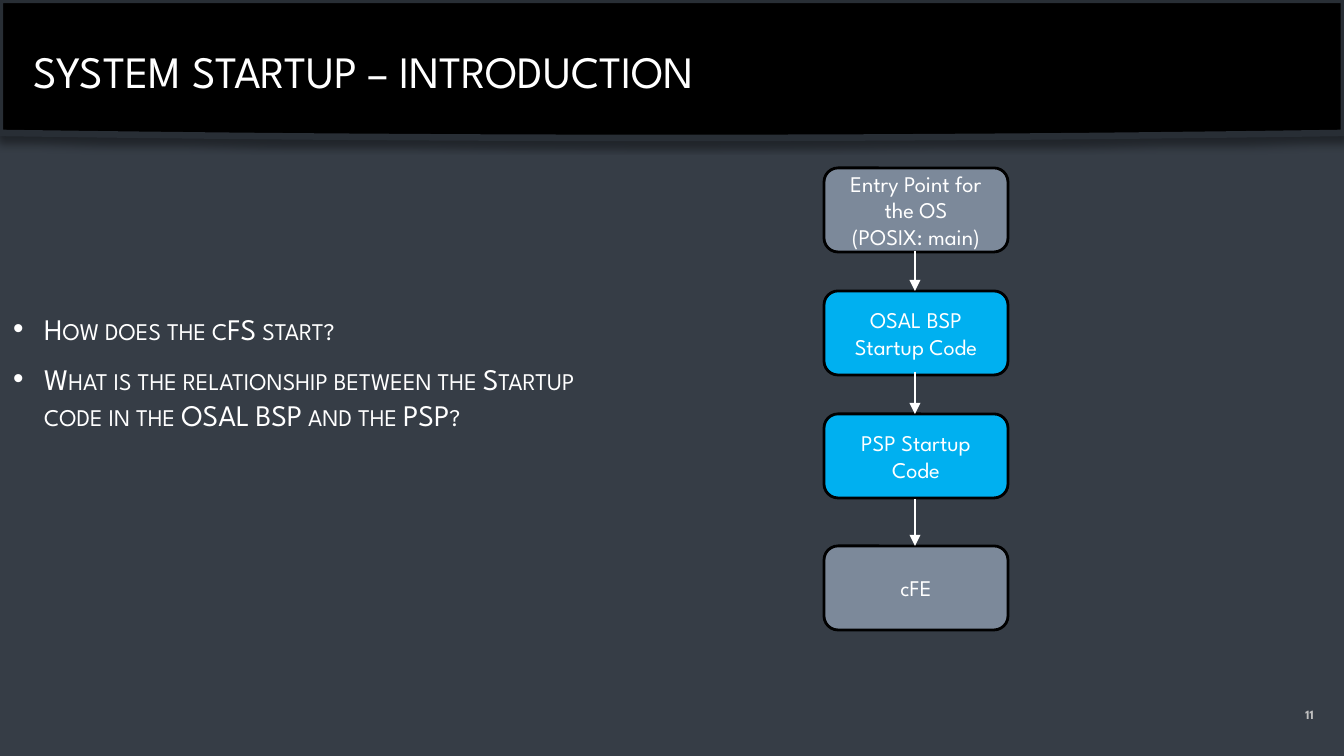
from lxml.etree import SubElement
from pptx import Presentation
from pptx.dml.color import RGBColor
from pptx.enum.shapes import MSO_CONNECTOR, MSO_SHAPE
from pptx.enum.text import MSO_ANCHOR, PP_ALIGN
from pptx.oxml.ns import qn
from pptx.util import Pt

PX = 914400 / 134.4  # EMU per px
WIDTH, HEIGHT = 1344, 756
FONT = "League Spartan"
WHITE = RGBColor(0xFF, 0xFF, 0xFF)
BLACK = RGBColor(0x00, 0x00, 0x00)
SLATE = RGBColor(0x36, 0x3D, 0x46)
EDGE = RGBColor(0x28, 0x2E, 0x35)
GRAY = RGBColor(0x7C, 0x89, 0x9A)
BLUE = RGBColor(0x00, 0xB0, 0xF0)
PALE = RGBColor(0xBF, 0xBF, 0xBF)


def px(*lengths):
    return [round(length * PX) for length in lengths]


def add_run(paragraph, text, size, color=WHITE):
    run = paragraph.add_run()
    run.text = text
    run.font.name = FONT
    run.font.size = Pt(size)
    run.font.color.rgb = color
    return run


prs = Presentation()
prs.slide_width, prs.slide_height = px(WIDTH, HEIGHT)
slide = prs.slides.add_slide(prs.slide_layouts[6])
slide.background.fill.solid()
slide.background.fill.fore_color.rgb = SLATE

# Banner with a bowed lower edge and a soft shadow
SIDE, BOW, STEPS = 133, 5, 32
curve = []
for step in range(STEPS + 1):
    t = 1 - step / STEPS
    curve.append(px(WIDTH * t, SIDE + BOW * 4 * t * (1 - t)))
builder = slide.shapes.build_freeform(*px(WIDTH, 0))
builder.add_line_segments(curve + [px(0, 0)], close=True)
banner = builder.convert_to_shape()
banner.fill.solid()
banner.fill.fore_color.rgb = BLACK
banner.line.color.rgb = EDGE
banner.line.width = Pt(3.5)
banner.shadow.inherit = False
effects = banner._element.spPr.find(qn("a:effectLst"))
shadow = SubElement(effects, qn("a:outerShdw"), blurRad=str(Pt(4)),
                    dist=str(Pt(3)), dir="5400000", rotWithShape="0")
shade = SubElement(shadow, qn("a:srgbClr"), val=str(BLACK))
SubElement(shade, qn("a:alpha"), val="40000")

# Title
title = slide.shapes.add_textbox(*px(20, 28, 1294, 85)).text_frame
title.word_wrap = True
title.vertical_anchor = MSO_ANCHOR.MIDDLE
add_run(title.paragraphs[0], "SYSTEM STARTUP – INTRODUCTION", 24)

# Questions
QUESTIONS = [
    "How does the cFS start?",
    "What is the relationship between the Startup code in the OSAL BSP and the PSP?",
]
questions = slide.shapes.add_textbox(*px(0, 169, 626, 503)).text_frame
questions.word_wrap = True
questions.vertical_anchor = MSO_ANCHOR.MIDDLE
questions.margin_bottom = px(105)[0]
indent = px(31)[0]
for i, question in enumerate(QUESTIONS):
    paragraph = questions.add_paragraph() if i else questions.paragraphs[0]
    paragraph.space_before = Pt(3.2)
    paragraph.space_after = Pt(4.5)
    props = paragraph._p.get_or_add_pPr()
    props.set("marL", str(indent))
    props.set("indent", str(-indent))
    bullet_color = SubElement(props, qn("a:buClr"))
    SubElement(bullet_color, qn("a:srgbClr"), val=str(WHITE))
    SubElement(props, qn("a:buFont"), typeface="Arial")
    SubElement(props, qn("a:buChar"), char="•")
    run = add_run(paragraph, question, 16)
    run.font._element.set("cap", "small")

# Startup sequence
STAGES = [
    (168, GRAY, ["Entry Point for the OS", "(POSIX: main)"]),
    (291, BLUE, ["OSAL BSP Startup Code"]),
    (414, BLUE, ["PSP Startup Code"]),
    (546, GRAY, ["cFE"]),
]
for top, color, lines in STAGES:
    stage = slide.shapes.add_shape(MSO_SHAPE.ROUNDED_RECTANGLE, *px(824, top, 184, 84))
    stage.shadow.inherit = False
    stage.fill.solid()
    stage.fill.fore_color.rgb = color
    stage.line.color.rgb = BLACK
    stage.line.width = Pt(1.5)
    label = stage.text_frame
    label.word_wrap = True
    label.vertical_anchor = MSO_ANCHOR.MIDDLE
    for i, line in enumerate(lines):
        paragraph = label.add_paragraph() if i else label.paragraphs[0]
        paragraph.alignment = PP_ALIGN.CENTER
        add_run(paragraph, line, 12)

# Arrows between the stages
for start, end in [(251, 291), (372, 414), (499, 546)]:
    arrow = slide.shapes.add_connector(MSO_CONNECTOR.STRAIGHT, *px(915, start, 915, end))
    arrow.line.color.rgb = WHITE
    arrow.line.width = Pt(1.5)
    SubElement(arrow.line._get_or_add_ln(), qn("a:tailEnd"), type="triangle")
    SubElement(arrow._element.spPr, qn("a:effectLst"))

# Page number
page = slide.shapes.add_textbox(*px(1246, 685, 81, 58)).text_frame
page.word_wrap = True
page.vertical_anchor = MSO_ANCHOR.MIDDLE
page.paragraphs[0].alignment = PP_ALIGN.RIGHT
add_run(page.paragraphs[0], "11", 6.8, PALE).font.bold = True

prs.save("out.pptx")
